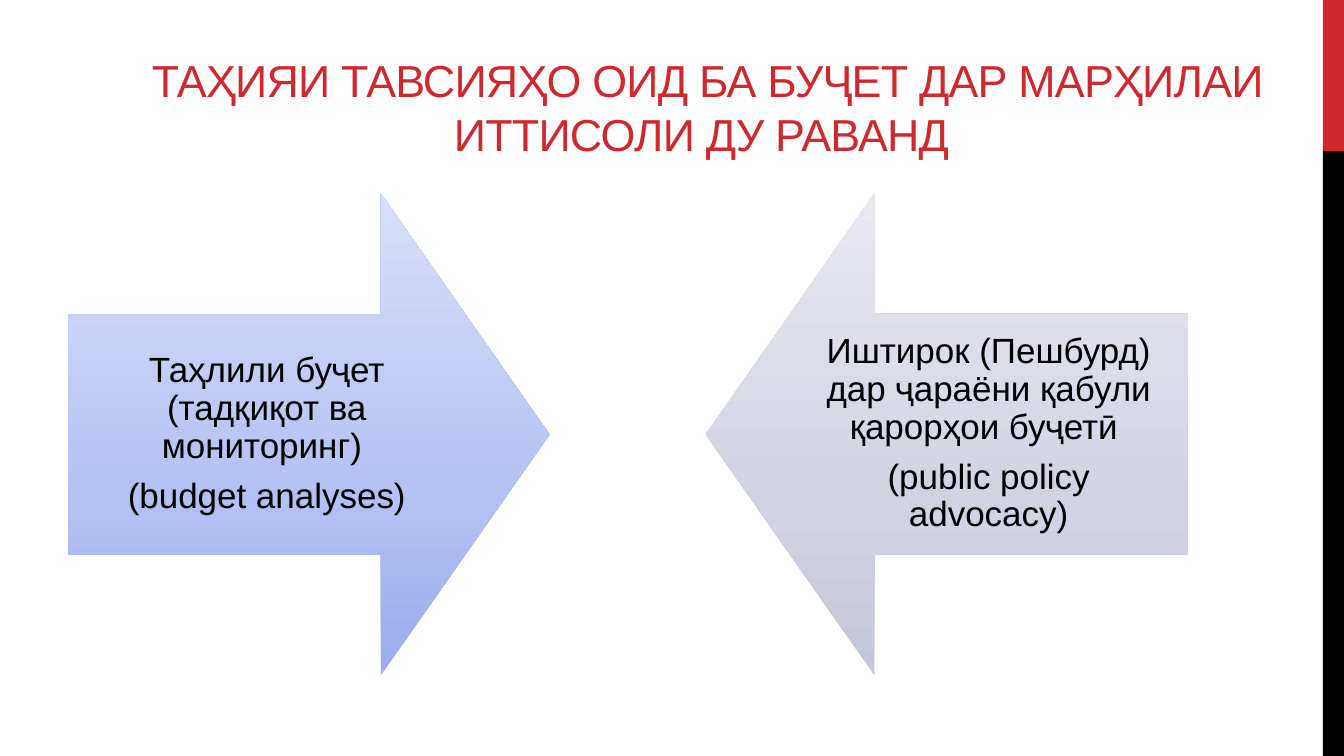
"""Build a slide with two facing arrows for budget analysis and advocacy."""
from dataclasses import dataclass

from lxml.etree import SubElement
from pptx import Presentation
from pptx.dml.color import RGBColor
from pptx.enum.shapes import MSO_SHAPE
from pptx.enum.text import MSO_ANCHOR, PP_ALIGN
from pptx.oxml.ns import qn
from pptx.slide import Slide
from pptx.text.text import TextFrame
from pptx.util import Inches, Pt

RED = RGBColor(0xD1, 0x28, 0x2E)
BLACK = RGBColor(0x00, 0x00, 0x00)
BLUE_SHADES = (
    RGBColor(0x9A, 0xAC, 0xED),
    RGBColor(0xB2, 0xC0, 0xF3),
    RGBColor(0xD8, 0xDF, 0xF9),
)
GREY_SHADES = (
    RGBColor(0xC3, 0xC5, 0xD9),
    RGBColor(0xD1, 0xD3, 0xE3),
    RGBColor(0xE8, 0xE8, 0xF1),
)
STOP_PERCENTS = (0, 35, 100)
FONT = "Arial"
ARROW_TOP, ARROW_SIZE = 1.92, 4.78
LABEL_TOP, LABEL_WIDTH, LABEL_HEIGHT = 3.11, 3.95, 2.39
LABEL_INSET = 0.19


@dataclass(frozen=True)
class Band:
    top: float
    height: float
    color: RGBColor


@dataclass(frozen=True)
class Arrow:
    left: float
    rotation: int
    shades: tuple[RGBColor, ...]
    label_left: float
    lines: tuple[str, ...]


BANDS = (Band(0, 1.5, RED), Band(1.5, 6, BLACK))
ARROWS = (
    Arrow(0.67, 270, BLUE_SHADES, 0.67,
          ("Таҳлили буҷет (тадқиқот ва мониторинг) ", "(budget analyses)")),
    Arrow(7, 90, GREY_SHADES, 7.83,
          ("Иштирок (Пешбурд) дар ҷараёни қабули қарорҳои буҷетӣ ",
           "(public policy advocacy)")),
)


def add_band(slide: Slide, band: Band) -> None:
    shape = slide.shapes.add_shape(
        MSO_SHAPE.RECTANGLE, Inches(13.12), Inches(band.top),
        Inches(0.21), Inches(band.height))
    shape.shadow.inherit = False
    shape.fill.solid()
    shape.fill.fore_color.rgb = band.color
    shape.line.fill.background()


def add_text(slide: Slide, left: float, top: float, width: float, height: float,
             lines: tuple[str, ...], size: float, color: RGBColor) -> TextFrame:
    frame = slide.shapes.add_textbox(
        Inches(left), Inches(top), Inches(width), Inches(height)).text_frame
    frame.word_wrap = True
    frame.text = "\n".join(lines)
    for paragraph in frame.paragraphs:
        paragraph.alignment = PP_ALIGN.CENTER
        paragraph.font.name = FONT
        paragraph.font.size = Pt(size)
        paragraph.font.color.rgb = color
    return frame


def add_title(slide: Slide) -> None:
    title = "ТАҲИЯИ ТАВСИЯҲО ОИД БА БУҶЕТ ДАР МАРҲИЛАИ ИТТИСОЛИ ДУ РАВАНД "
    frame = add_text(slide, 0.45, 0.22, 13.13, 1.42, (title,), 32, RED)
    frame.vertical_anchor = MSO_ANCHOR.BOTTOM
    run = frame.paragraphs[0].runs[0]
    run.font._element.set("spc", "-60")


def add_arrow(slide: Slide, arrow: Arrow) -> None:
    shape = slide.shapes.add_shape(
        MSO_SHAPE.DOWN_ARROW, Inches(arrow.left), Inches(ARROW_TOP),
        Inches(ARROW_SIZE), Inches(ARROW_SIZE))
    shape.rotation = arrow.rotation
    shape.adjustments[0] = 0.5
    shape.adjustments[1] = 0.35
    shape.shadow.inherit = False
    shape.line.fill.background()
    shape.fill.gradient()
    shape.fill.gradient_angle = 90
    gradient = shape._element.spPr.find(qn("a:gradFill"))
    gradient.set("rotWithShape", "0")
    stops = gradient.find(qn("a:gsLst"))
    for stop in list(stops):
        stops.remove(stop)
    for percent, shade in zip(STOP_PERCENTS, arrow.shades):
        stop = SubElement(stops, qn("a:gs"), pos=str(percent * 1000))
        SubElement(stop, qn("a:srgbClr"), val=str(shade))


def add_label(slide: Slide, arrow: Arrow) -> None:
    frame = add_text(slide, arrow.label_left, LABEL_TOP, LABEL_WIDTH, LABEL_HEIGHT,
                     arrow.lines, 25, BLACK)
    frame.vertical_anchor = MSO_ANCHOR.MIDDLE
    frame.margin_left = frame.margin_right = Inches(LABEL_INSET)
    frame.margin_top = frame.margin_bottom = Inches(LABEL_INSET)
    for paragraph in frame.paragraphs:
        paragraph.line_spacing = 0.9
        paragraph.space_after = Pt(8.75)


def main() -> None:
    presentation = Presentation()
    presentation.slide_width = Inches(13.33)
    presentation.slide_height = Inches(7.5)
    slide = presentation.slides.add_slide(presentation.slide_layouts[6])
    for band in BANDS:
        add_band(slide, band)
    add_title(slide)
    for arrow in ARROWS:
        add_arrow(slide, arrow)
        add_label(slide, arrow)
    presentation.save("out.pptx")


if __name__ == "__main__":
    main()
